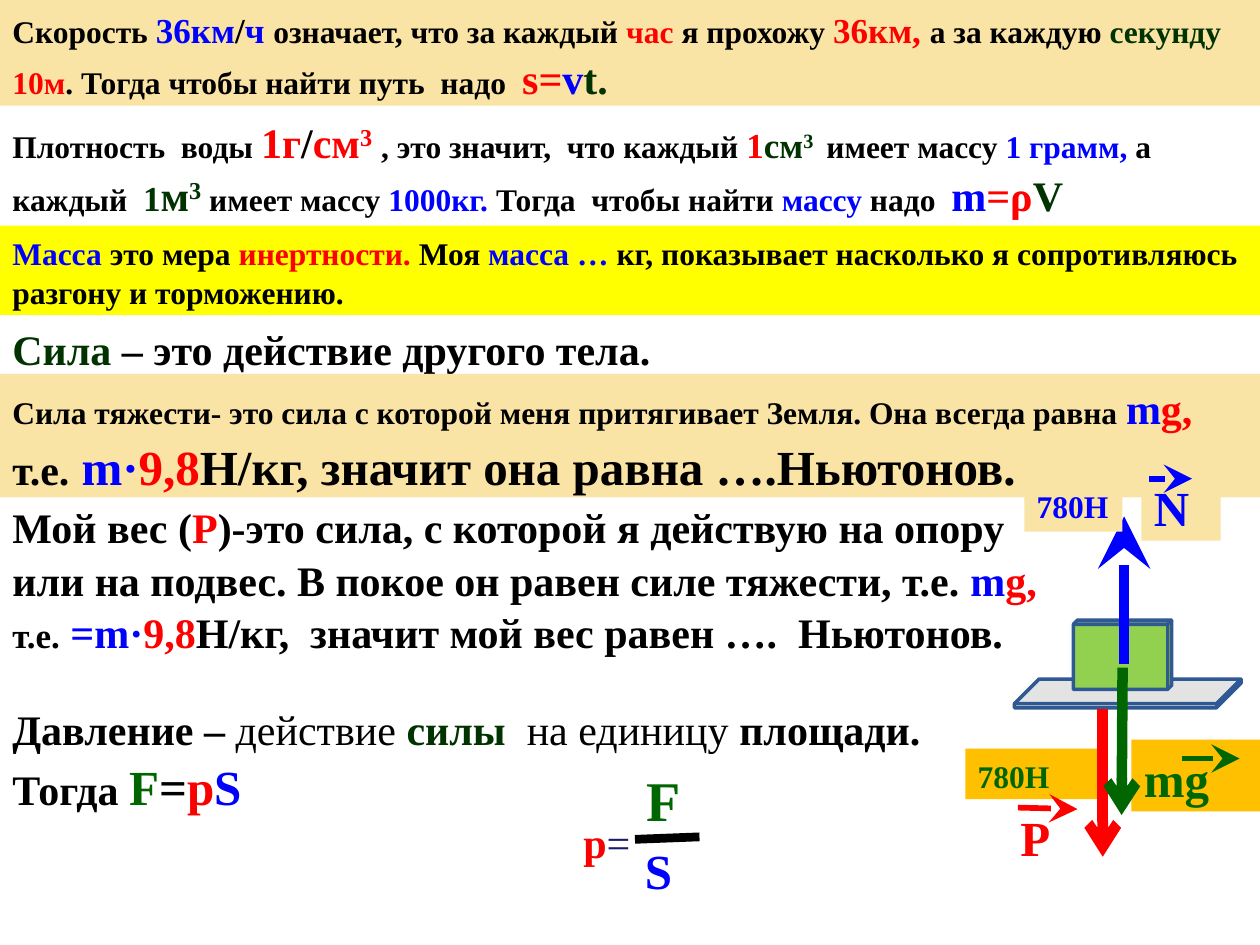
from lxml.etree import SubElement
from pptx import Presentation
from pptx.dml.color import RGBColor
from pptx.enum.shapes import MSO_CONNECTOR, MSO_SHAPE
from pptx.oxml.ns import qn
from pptx.util import Cm, Pt

BLACK, RED, BLUE = "000000", "FF0000", "0000FF"
DARK, GREEN, CRIMSON, NAVY = "003300", "006600", "F90101", "1A1A70"
SAND, YELLOW, ORANGE = "F9E3A5", "FFFF00", "FFC000"
rgb = RGBColor.from_string


def add_text(box, size, paragraphs, fill=None, after=0):
    """Runs are (text, colour, size, style); style is "sup" or "plain"."""
    s = sp.add_textbox(*map(Cm, box))
    if fill:
        s.fill.solid()
        s.fill.fore_color.rgb = rgb(fill)
    tf = s.text_frame
    tf.word_wrap = True
    for i, runs in enumerate(paragraphs):
        p = tf.add_paragraph() if i else tf.paragraphs[0]
        p.font.name, p.font.size, p.font.bold = "Times New Roman", Pt(size), True
        p.line_spacing, p.space_after = 1.05, Pt(after)
        for text, color, *rest in runs:
            r = p.add_run()
            r.text = text
            r.font.name = "Times New Roman"
            r.font.color.rgb = rgb(color)
            r.font.size = Pt(rest[0] if rest else size)
            r.font.bold = "plain" not in rest
            if "sup" in rest:
                r._r.get_or_add_rPr().set("baseline", "30000")


def add_line(ends, color, width, arrow=None, scale="med"):
    """The arrowhead sits at the second point."""
    c = sp.add_connector(MSO_CONNECTOR.STRAIGHT, *map(Cm, ends))
    c.line.color.rgb = rgb(color)
    c.line.width = Pt(width)
    if arrow:
        SubElement(c.line._get_or_add_ln(), qn("a:tailEnd"), type=arrow, w=scale, len=scale)
    SubElement(c._element.spPr, qn("a:effectLst"))


prs = Presentation()
prs.slide_width, prs.slide_height = Cm(25.4), Cm(19.05)
sp = prs.slides.add_slide(prs.slide_layouts[6]).shapes

# Definitions
add_text((0, 0, 25.4, 2.13), 18, [[
    ("Скорость ", BLACK), ("36км", BLUE, 20), ("/", BLACK, 20), ("ч ", BLUE, 20),
    ("означает, что за каждый ", BLACK), ("час ", RED), ("я прохожу ", BLACK),
    ("36км, ", RED, 20), ("а за каждую ", BLACK), ("секунду ", DARK), ("10м", RED),
    (". Тогда чтобы найти путь  надо  ", BLACK),
    ("s=", RED, 24), ("v", BLUE, 24), ("t.", DARK, 24)]], SAND)
add_text((0, 2.18, 25.4, 2.31), 18, [[
    ("Плотность  воды ", BLACK), ("1г", RED, 24), ("/", BLACK, 24), ("см", RED, 24),
    ("3", RED, 24, "sup"), (" ", RED, 20), (", это значит,  что каждый ", BLACK),
    ("1", RED, 20), ("см", DARK, 20), ("3 ", DARK, 20, "sup"), (" имеет массу ", BLACK),
    ("1 грамм, ", BLUE), ("а каждый  ", BLACK), ("1", DARK, 20), ("м", DARK, 24),
    ("3", DARK, 24, "sup"), (" имеет массу ", BLACK), ("1000кг. ", BLUE),
    ("Тогда  чтобы найти ", BLACK), ("массу ", BLUE), ("надо  ", BLACK),
    ("m", BLUE, 24), ("=ρ", RED, 24), ("V", DARK, 24)]])
add_text((0, 4.55, 25.4, 1.8), 18, [[
    ("Масса", BLUE), (" это мера ", BLACK), ("инертности. ", RED), ("Моя ", BLACK),
    ("масса … ", BLUE),
    ("кг, показывает насколько я сопротивляюсь разгону и торможению.", BLACK)]], YELLOW)
add_text((0, 6.35, 25.4, 1.27), 24, [[
    ("Сила", DARK), (" – это действие другого тела.", BLACK)]])
add_text((0, 7.54, 25.4, 2.49), 24, [
    [("Сила тяжести- это сила с которой меня притягивает Земля. Она всегда равна ", BLACK, 18),
     ("m", BLUE), ("g,", RED)],
    [("т.е.", BLACK), (" m·", BLUE, 28), ("9,8", RED, 28),
     ("Н/кг, значит она равна ….Ньютонов.", BLACK, 28)]], SAND)
add_text((0, 9.93, 21.44, 4.37), 24, [[
    ("Мой вес (", BLACK), ("Р", RED),
    (")-это сила, с которой я действую на опору или на подвес. "
     "В покое он равен силе тяжести, т.е. ", BLACK),
    ("m", BLUE), ("g,", RED), (" т.е.", BLACK, 20), (" =m·", BLUE), ("9,8", RED),
    ("Н/кг,  значит мой вес равен ….  Ньютонов.", BLACK)]])
add_text((0, 14, 19.84, 2.49), 24, [
    [("Давление – ", BLACK), ("действие ", BLACK, 24, "plain"), ("силы", DARK),
     ("  на единицу ", BLACK, 24, "plain"), ("площади.", BLACK)],
    [("Тогда ", BLACK), ("F", GREEN, 28), ("=", BLACK, 28), ("p", CRIMSON, 28),
     ("S", BLUE, 28)]])

# Pressure fraction
add_text((11.51, 16.28, 1.78, 1.27), 24, [[("p", CRIMSON), ("=", NAVY, 24, "plain")]])
add_text((12.78, 15.24, 1.5, 1.63), 32, [[("F", GREEN)]])
add_text((12.75, 16.77, 1.5, 1.5), 28, [[("S", BLUE)]])
add_line((12.8, 16.92, 14.1, 16.87), BLACK, 5)

# Block on a support
for box, depth, fill in [((20.45, 13.69, 4.57, 0.58), 0.858, "DDDDDD"),
                         ((21.64, 12.5, 1.98, 1.4), 0.061, "92D050")]:
    s = sp.add_shape(MSO_SHAPE.CUBE, *map(Cm, box))
    s.adjustments[0] = depth
    s.shadow.inherit = False
    s.fill.solid()
    s.fill.fore_color.rgb = rgb(fill)
    s.line.color.rgb = rgb("2E5992")
    s.line.width = Pt(2)

# Forces and their labels
add_line((22.66, 13.39, 22.66, 10.41), BLUE, 6, "stealth", "lg")
for text, color, size, box, fill, vector in [
        ("mg", GREEN, 28, (22.81, 14.91, 2.59, 1.45), ORANGE, (23.83, 15.29, 24.99, 15.29)),
        ("N", BLUE, 28, (23.01, 9.45, 1.6, 1.45), SAND, (23.16, 9.65, 24.03, 9.65)),
        ("780Н", BLUE, 18, (20.65, 9.65, 1.98, 1.07), SAND, None),
        ("780Н", GREEN, 18, (19.46, 15.09, 2.77, 1.02), ORANGE, None),
        ("Р", RED, 28, (20.32, 16.1, 2.18, 1.45), None, (20.52, 16.28, 21.72, 16.31))]:
    add_text(box, size, [[(text, color)]], fill, after=10)
    if vector:
        add_line(vector, color, 3.25, "stealth", "lg")
add_line((22.23, 14.3, 22.23, 17.27), RED, 6, "arrow")
add_line((22.63, 13.46, 22.61, 16.43), GREEN, 6, "arrow")

prs.save("out.pptx")
